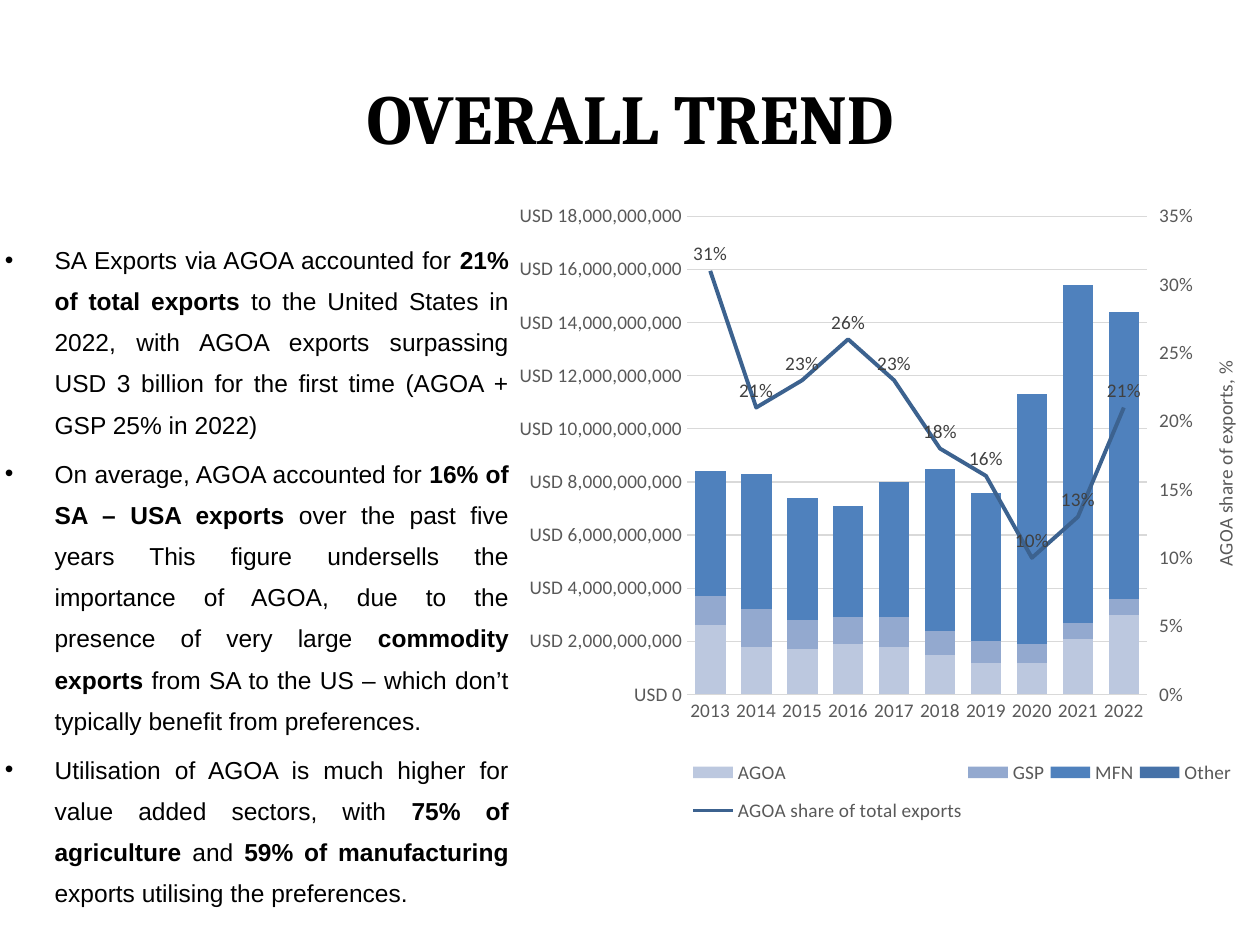
from pptx import Presentation
from pptx.chart.axis import ValueAxis
from pptx.chart.data import CategoryChartData
from pptx.dml.color import RGBColor
from pptx.enum.chart import (XL_CHART_TYPE, XL_LABEL_POSITION, XL_LEGEND_POSITION,
                             XL_MARKER_STYLE, XL_TICK_MARK)
from pptx.enum.text import MSO_ANCHOR, MSO_AUTO_SIZE, PP_ALIGN
from pptx.oxml import parse_xml
from pptx.oxml.ns import nsdecls, qn
from pptx.util import Cm, Pt

BLACK = RGBColor(0x00, 0x00, 0x00)
GREY = RGBColor(0x59, 0x59, 0x59)
LABEL = RGBColor(0x40, 0x40, 0x40)
GRID = RGBColor(0xD9, 0xD9, 0xD9)
LINE = RGBColor(0x3C, 0x62, 0x8F)
BARS = [RGBColor(0xBC, 0xC8, 0xDF), RGBColor(0x93, 0xA9, 0xCF),
        RGBColor(0x4F, 0x81, 0xBD), RGBColor(0x46, 0x72, 0xA8)]

BULLETS = [
    [("SA Exports via AGOA accounted for ", False),
     ("21% of total exports ", True),
     ("to the United States in 2022, with AGOA exports surpassing USD 3 billion "
      "for the first time (AGOA + GSP 25% in 2022)", False)],
    [("On average, AGOA accounted for ", False),
     ("16% of SA – USA exports", True),
     (" over the past five years This figure undersells the importance of AGOA, "
      "due to the presence of very large ", False),
     ("commodity exports ", True),
     ("from SA to the US – which don’t typically benefit from preferences.", False)],
    [("Utilisation of AGOA is much higher for value added sectors, with ", False),
     ("75% of agriculture ", True),
     ("and ", False),
     ("59% of manufacturing ", True),
     ("exports utilising the preferences.", False)],
]

YEARS = [str(year) for year in range(2013, 2023)]
EXPORTS_BN = {
    "AGOA": [2.6, 1.8, 1.7, 1.9, 1.8, 1.5, 1.2, 1.2, 2.1, 3.0],
    "GSP": [1.1, 1.4, 1.1, 1.0, 1.1, 0.9, 0.8, 0.7, 0.6, 0.6],
    "MFN": [4.7, 5.1, 4.6, 4.2, 5.1, 6.1, 5.6, 9.4, 12.7, 10.8],
    "Other": [0] * 10,
}
SHARE = [0.31, 0.21, 0.23, 0.26, 0.23, 0.18, 0.16, 0.10, 0.13, 0.21]

LINE_CHART = f"""<c:lineChart {nsdecls('c')}>
  <c:grouping val="standard"/><c:varyColors val="0"/>
  <c:marker val="1"/><c:axId val="5001"/><c:axId val="5002"/>
</c:lineChart>"""
HIDDEN_AXIS = f"""<c:catAx {nsdecls('c')}>
  <c:axId val="5001"/><c:scaling><c:orientation val="minMax"/></c:scaling>
  <c:delete val="1"/><c:axPos val="b"/><c:crossAx val="5002"/><c:crosses val="autoZero"/>
</c:catAx>"""
RIGHT_AXIS = f"""<c:valAx {nsdecls('c')}>
  <c:axId val="5002"/><c:scaling><c:orientation val="minMax"/></c:scaling>
  <c:delete val="0"/><c:axPos val="r"/><c:crossAx val="5001"/><c:crosses val="max"/>
</c:valAx>"""


class TrendSlide:
    body_font = "Arial"
    title_font = "Cambria"
    chart_font = "Calibri"

    def __init__(self, prs):
        self.s = prs.slides.add_slide(prs.slide_layouts[1])

    def font(self, font, name, size, color, bold=None):
        font.name, font.size, font.bold = name, Pt(size), bold
        font.color.rgb = color

    def place(self, sp, left, top, width, height):
        sp.left, sp.top, sp.width, sp.height = map(Cm, (left, top, width, height))

    def clear(self, parent, tag):
        for child in parent.findall(qn(tag)):
            parent.remove(child)

    def title(self, text, *box):
        sp = self.s.shapes.title
        self.place(sp, *box)
        tf = sp.text_frame
        tf.vertical_anchor = MSO_ANCHOR.MIDDLE
        p = tf.paragraphs[0]
        p.text = text
        p.alignment = PP_ALIGN.CENTER
        self.font(p.font, self.title_font, 40, BLACK, True)

    def bullets(self, items, *box):
        sp = self.s.placeholders[1]
        self.place(sp, *box)
        tf = sp.text_frame
        tf.auto_size = MSO_AUTO_SIZE.SHAPE_TO_FIT_TEXT
        tf.margin_left = tf.margin_right = Cm(0.1)
        tf.margin_top = tf.margin_bottom = Cm(0.05)
        for i, runs in enumerate(items):
            p = tf.add_paragraph() if i else tf.paragraphs[0]
            pPr = p._p.get_or_add_pPr()
            pPr.set("marL", str(Cm(1)))
            pPr.set("indent", str(-Cm(1)))
            p.alignment = PP_ALIGN.JUSTIFY
            p.line_spacing = 1.4
            p.space_before = Pt(4.5 if i else 0)
            self.font(p.font, self.body_font, 14, BLACK)
            for text, bold in runs:
                r = p.add_run()
                r.text = text
                r.font.bold = bold

    def layout(self, x, y, w, h, inner=False):
        target = '<c:layoutTarget val="inner"/>' if inner else ""
        return parse_xml(
            f'<c:layout {nsdecls("c")}><c:manualLayout>{target}'
            '<c:xMode val="edge"/><c:yMode val="edge"/>'
            f'<c:x val="{x}"/><c:y val="{y}"/><c:w val="{w}"/><c:h val="{h}"/>'
            '</c:manualLayout></c:layout>')

    def axis(self, axis, tick=XL_TICK_MARK.NONE, line=None):
        axis.major_tick_mark = tick
        axis.minor_tick_mark = XL_TICK_MARK.NONE
        self.font(axis.tick_labels.font, self.chart_font, 11, GREY)
        if line is None:
            axis.format.line.fill.background()
        else:
            axis.format.line.color.rgb = line
            axis.format.line.width = Pt(0.75)

    def value_axis(self, axis, maximum, step, number_format, **style):
        axis.minimum_scale, axis.maximum_scale, axis.major_unit = 0, maximum, step
        axis.tick_labels.number_format = number_format
        axis.tick_labels.number_format_is_linked = False
        self.axis(axis, **style)

    def share_line(self, chart, area):
        bar = area.find(qn("c:barChart"))
        ser = bar.findall(qn("c:ser"))[-1]
        self.clear(ser, "c:invertIfNegative")
        line = parse_xml(LINE_CHART)
        line.insert(2, ser)
        bar.addnext(line)
        right = parse_xml(RIGHT_AXIS)
        area.findall(qn("c:valAx"))[-1].addnext(right)
        right.addnext(parse_xml(HIDDEN_AXIS))

        series = chart.plots[1].series[0]
        series.smooth = False
        series.marker.style = XL_MARKER_STYLE.NONE
        series.format.line.color.rgb = LINE
        series.format.line.width = Pt(2.25)
        labels = series.data_labels
        labels.show_value = True
        labels.position = XL_LABEL_POSITION.ABOVE
        labels.number_format, labels.number_format_is_linked = "0%", False
        self.font(labels.font, self.chart_font, 11, LABEL)

        axis = ValueAxis(right)
        axis.has_major_gridlines = False
        self.value_axis(axis, 0.35, 0.05, "0%", tick=XL_TICK_MARK.OUTSIDE)
        tf = axis.axis_title.text_frame
        tf.text = "AGOA share of exports, %"
        tf._txBody.bodyPr.set("rot", "-5400000")
        tf._txBody.bodyPr.set("vert", "horz")
        self.font(tf.paragraphs[0].font, self.chart_font, 11, GREY, False)

    def chart(self, *box):
        data = CategoryChartData()
        data.categories = YEARS
        for name, billions in EXPORTS_BN.items():
            data.add_series(name, [round(v * 1e9) for v in billions])
        data.add_series("AGOA share of total exports", SHARE, "0%")
        chart = self.s.shapes.add_chart(
            XL_CHART_TYPE.COLUMN_STACKED, *map(Cm, box), data).chart
        self.font(chart.font, self.chart_font, 11, BLACK)
        chart.has_title = False
        bars = chart.plots[0]
        bars.vary_by_categories = False
        bars.gap_width, bars.overlap = 50, 100
        for series, color in zip(bars.series, BARS):
            series.format.fill.solid()
            series.format.fill.fore_color.rgb = color

        self.axis(chart.category_axis, line=GRID)
        values = chart.value_axis
        self.value_axis(values, 18e9, 2e9, r"[$USD]\ #,##0")
        values.major_gridlines.format.line.color.rgb = GRID
        values.major_gridlines.format.line.width = Pt(0.75)

        area = chart._chartSpace.chart.plotArea
        self.share_line(chart, area)
        self.clear(area, "c:layout")
        area.insert(0, self.layout(0.24, 0.04, 0.61, 0.74, inner=True))

        chart.has_legend = True
        legend = chart.legend
        legend.position = XL_LEGEND_POSITION.BOTTOM
        legend.include_in_layout = False
        self.font(legend.font, self.chart_font, 11, GREY)
        element = legend._element
        self.clear(element, "c:layout")
        element.get_or_add_legendPos().addnext(self.layout(0.24, 0.86, 0.73, 0.14))


def main():
    prs = Presentation()
    prs.slide_width, prs.slide_height = Cm(25.4), Cm(19.05)
    slide = TrendSlide(prs)
    slide.title("OVERALL TREND", 1.27, 0.76, 22.86, 3.18)
    slide.bullets(BULLETS, 0, 4.65, 10.36, 13.77)
    slide.chart(10.21, 3.84, 15.19, 13.03)
    prs.save("out.pptx")


if __name__ == "__main__":
    main()
